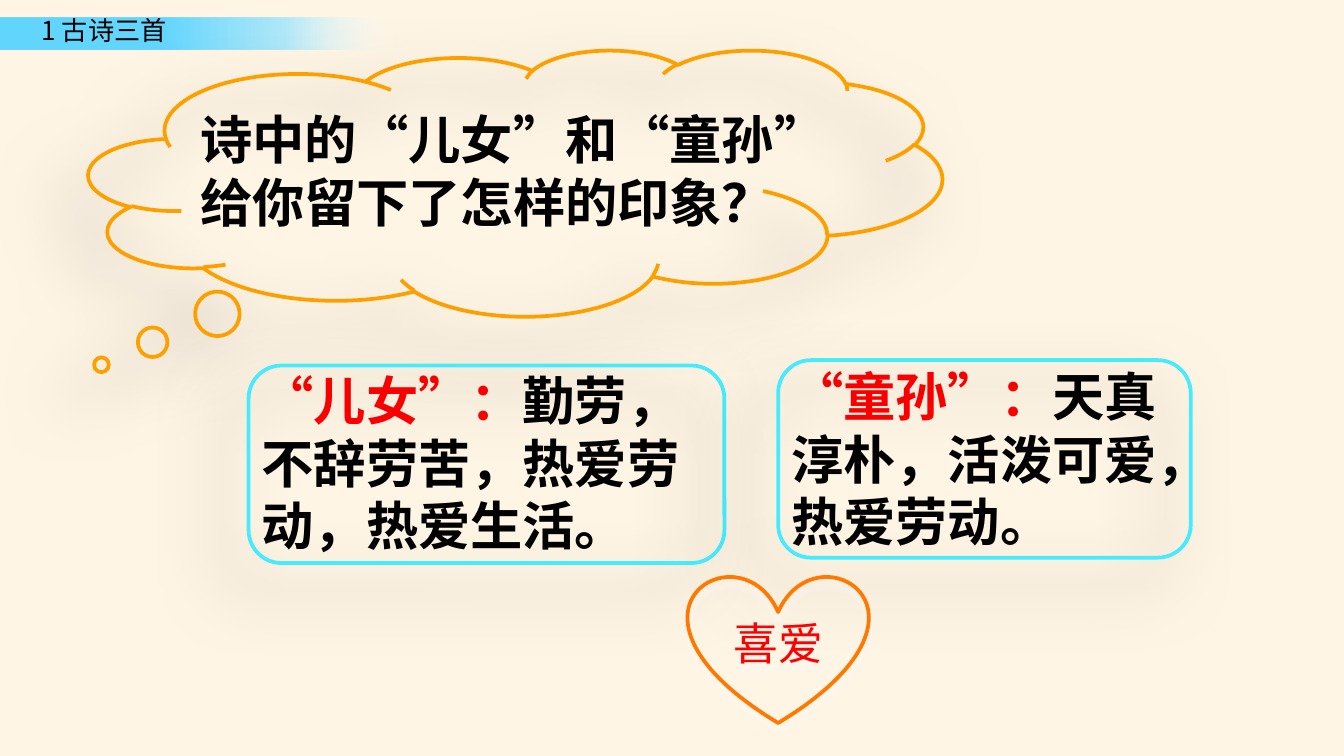
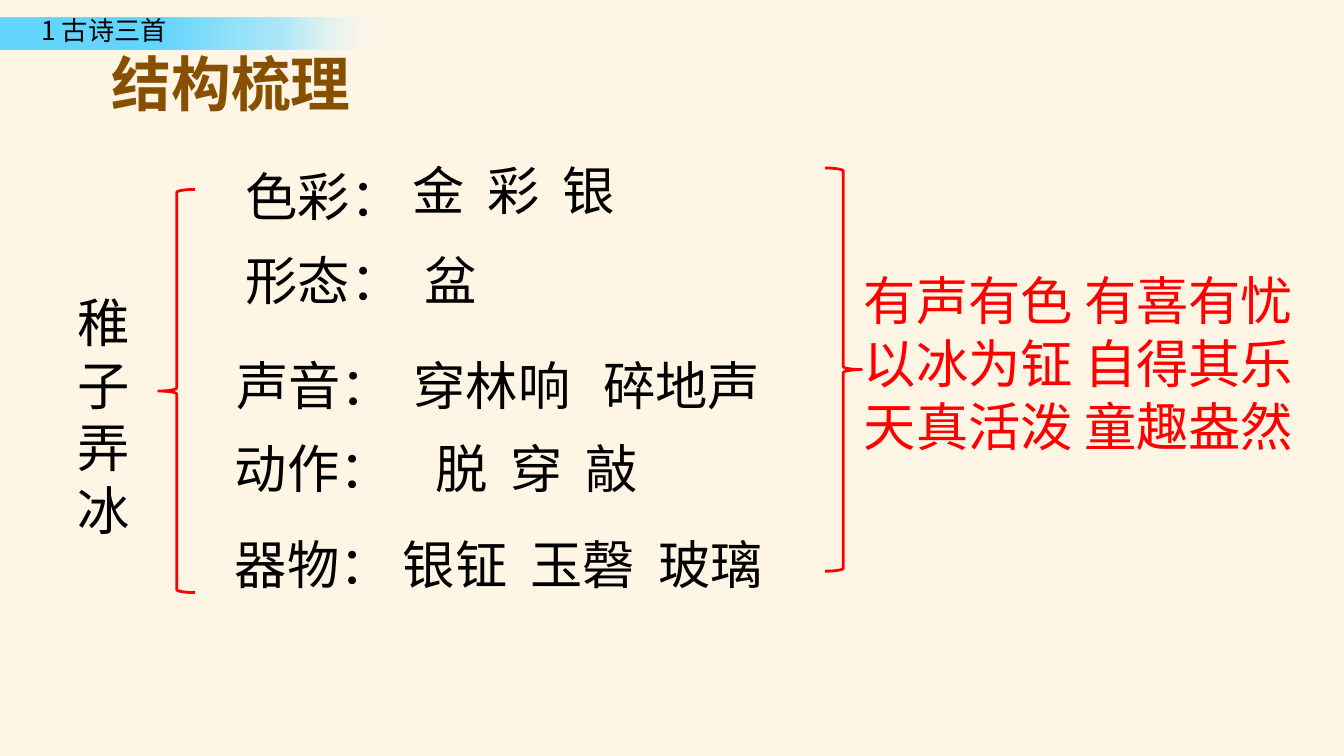
from lxml.etree import SubElement
from pptx import Presentation
from pptx.dml.color import RGBColor
from pptx.enum.lang import MSO_LANGUAGE_ID
from pptx.enum.shapes import MSO_SHAPE
from pptx.enum.text import MSO_ANCHOR, MSO_AUTO_SIZE, PP_ALIGN
from pptx.oxml import parse_xml
from pptx.oxml.ns import nsdecls, qn
from pptx.util import Inches, Pt

CREAM = RGBColor(0xFF, 0xF2, 0xDD)
BLACK = RGBColor(0, 0, 0)
RED = RGBColor(0xFF, 0, 0)
BROWN = RGBColor(0x87, 0x50, 0)
AMBER = RGBColor(0xFE, 0x9F, 0)
CYAN = RGBColor(0x46, 0xEC, 0xFD)
ORANGE = RGBColor(0xFF, 0x78, 0)
WHITE = RGBColor(0xFF, 0xFF, 0xFF)
CJK = "Noto Sans CJK SC"


def write(sp, runs, size=28, bold=False, name=CJK, align=PP_ALIGN.LEFT, wrap=True,
          anchor=MSO_ANCHOR.TOP, fit=MSO_AUTO_SIZE.SHAPE_TO_FIT_TEXT):
    tf = sp.text_frame
    for key, value in {"word_wrap": wrap, "auto_size": fit, "vertical_anchor": anchor}.items():
        setattr(tf, key, value)
    p = tf.paragraphs[0]
    p.alignment = align
    fmt = {"size": Pt(size), "bold": bold, "name": name,
           "language_id": MSO_LANGUAGE_ID.SIMPLIFIED_CHINESE}
    for text, color in runs:
        r = p.add_run()
        r.text = text
        for key, value in fmt.items():
            setattr(r.font, key, value)
        r.font.color.rgb = color
        SubElement(r.font._element, qn("a:ea"), typeface=CJK)
    return p


def outline(shapes, kind, at, color, width, shadow=None):
    sp = shapes.add_shape(kind, *map(Inches, at))
    sp.shadow.inherit = False
    sp.fill.background()
    sp.line.color.rgb = color
    sp.line.width = Pt(width)
    if shadow:
        tint, alpha, blur, dist, angle = shadow
        effects = sp._element.spPr.find(qn("a:effectLst"))
        effects.append(parse_xml(
            f'<a:outerShdw {nsdecls("a")} blurRad="{Pt(blur)}" dist="{Pt(dist)}" '
            f'dir="{angle * 60000}" algn="ctr" rotWithShape="0"><a:srgbClr val="{tint}">'
            f'<a:alpha val="{alpha * 1000}"/></a:srgbClr></a:outerShdw>'))
    return sp


prs = Presentation()
prs.slide_width = Inches(10)
prs.slide_height = Inches(10) * 9 // 16
master = prs.slide_master
fill = master.background.fill
fill.solid()
fill.fore_color.rgb = CREAM
for clr in master._element.cSld.bg.iter(qn("a:srgbClr")):
    SubElement(clr, qn("a:alpha"), val="74000")

s = prs.slides.add_slide(prs.slide_layouts[6])

band = s.shapes.add_shape(MSO_SHAPE.RECTANGLE, 0, Inches(0.13), Inches(3.03), Inches(0.24))
band.shadow.inherit = False
band.line.fill.background()
band.fill.background()
stops = "".join(
    f'<a:gs pos="{pos}000"><a:srgbClr val="{tint}"><a:alpha val="{alpha}000"/></a:srgbClr></a:gs>'
    for pos, tint, alpha in [(40, "63D6FF", 100), (70, "97E4FF", 76), (97, "FFFFFF", 0)])
spPr = band._element.spPr
spPr.replace(spPr.find(qn("a:noFill")), parse_xml(
    f'<a:gradFill {nsdecls("a")} rotWithShape="1"><a:gsLst>{stops}</a:gsLst>'
    '<a:lin ang="0" scaled="0"/></a:gradFill>'))
header = s.shapes.add_textbox(Inches(0.21), Inches(0.06), Inches(1.18), Inches(0.34))
write(header, [("1 古诗三首", BLACK)], size=14, wrap=False)
for number, sp in enumerate([band, header], 101):
    sp._element.nvSpPr.cNvPr.set("id", str(number))
    master.shapes._spTree.append(sp._element)

SOFT = (BLACK, 50, 35, 20, 135)
notes = [
    ((1.39, 0.75, 5.26, 1.04), [("诗中的“儿女”和“童孙” 给你留下了怎样的印象？", BLACK)],
     MSO_SHAPE.CLOUD_CALLOUT, (0.66, 0.37, 6.35, 1.98), AMBER),
    ((1.85, 2.69, 3.54, 1.51), [("“儿女”：", RED), ("勤劳，不辞劳苦，热爱劳动，热爱生活。", BLACK)],
     MSO_SHAPE.ROUNDED_RECTANGLE, (1.85, 2.72, 3.54, 1.47), CYAN),
    ((5.79, 2.66, 3.07, 1.51), [("“童孙”：", RED), ("天真淳朴，活泼可爱，热爱劳动。", BLACK)],
     MSO_SHAPE.ROUNDED_RECTANGLE, (5.79, 2.68, 3.07, 1.47), CYAN),
]
for text_at, runs, kind, frame_at, color in notes:
    group = s.shapes.add_group_shape()
    write(group.shapes.add_textbox(*map(Inches, text_at)), runs, bold=True)
    frame = outline(group.shapes, kind, frame_at, color, 2, SOFT)
    if kind == MSO_SHAPE.CLOUD_CALLOUT:
        frame.adjustments[0], frame.adjustments[1] = -0.485, 0.684

heart = outline(s.shapes, MSO_SHAPE.HEART, (5.12, 4.28, 1.34, 1.1), ORANGE, 2,
                (WHITE, 51, 4, 4, 90))
write(heart, [("喜爱", RED)], size=24, align=PP_ALIGN.CENTER, anchor=MSO_ANCHOR.MIDDLE,
      fit=MSO_AUTO_SIZE.NONE)

s = prs.slides.add_slide(prs.slide_layouts[5])
title = s.shapes.title
for key, value in {"left": 0.76, "top": 0.31, "width": 2.43, "height": 0.61}.items():
    setattr(title, key, Inches(value))
for key, value in {"left": 0.07, "right": 0.07, "top": 0.04, "bottom": 0.04}.items():
    setattr(title.text_frame, f"margin_{key}", Inches(value))
write(title, [("结构梳理", BROWN)], size=32, bold=True, name="Lato")

texts = [
    ((0.48, 2.11, 0.55, 1.99), "稚子弄冰", BLACK),
    ((6.33, 1.95, 3.52, 1.51), "有声有色 有喜有忧以冰为钲 自得其乐天真活泼 童趣盎然", RED),
    ((1.73, 1.17, 0.99, 0.57), "色彩：", BLACK),
    ((1.73, 1.8, 0.99, 0.57), "形态：", BLACK),
    ((1.66, 2.58, 1.25, 0.57), "声音：", BLACK),
    ((1.65, 3.2, 1.25, 0.57), "动作：", BLACK),
    ((1.65, 3.91, 1.25, 0.57), "器物：", BLACK),
    ((2.97, 1.13, 2.19, 0.57), "金\t彩\t银", BLACK),
    ((3.06, 1.8, 1.88, 0.57), "盆", BLACK),
    ((2.98, 2.58, 1.48, 0.57), "穿林响", BLACK),
    ((4.39, 2.58, 1.48, 0.57), "碎地声", BLACK),
    ((3.14, 3.2, 2.27, 0.57), "脱\t穿\t敲", BLACK),
    ((2.9, 3.91, 3.52, 0.57), "银钲\t玉磬\t玻璃", BLACK),
]
for at, text, color in texts:
    p = write(s.shapes.add_textbox(*map(Inches, at)), [(text, color)])
    words = text.split("\t")
    if len(words) > 1:
        step = 0.39 * len(words[0]) + 0.17
        tabs = SubElement(p._p.get_or_add_pPr(), qn("a:tabLst"))
        for i in range(1, len(words)):
            SubElement(tabs, qn("a:tab"), pos=str(Inches(i * step)), algn="l")

for left, top, turn in [(1.18, 1.41, 0), (6.14, 1.25, 180)]:
    brace = outline(s.shapes, MSO_SHAPE.LEFT_BRACE, (left, top, 0.27, 3), RED, 1.5)
    brace.rotation = turn

prs.save("out.pptx")
